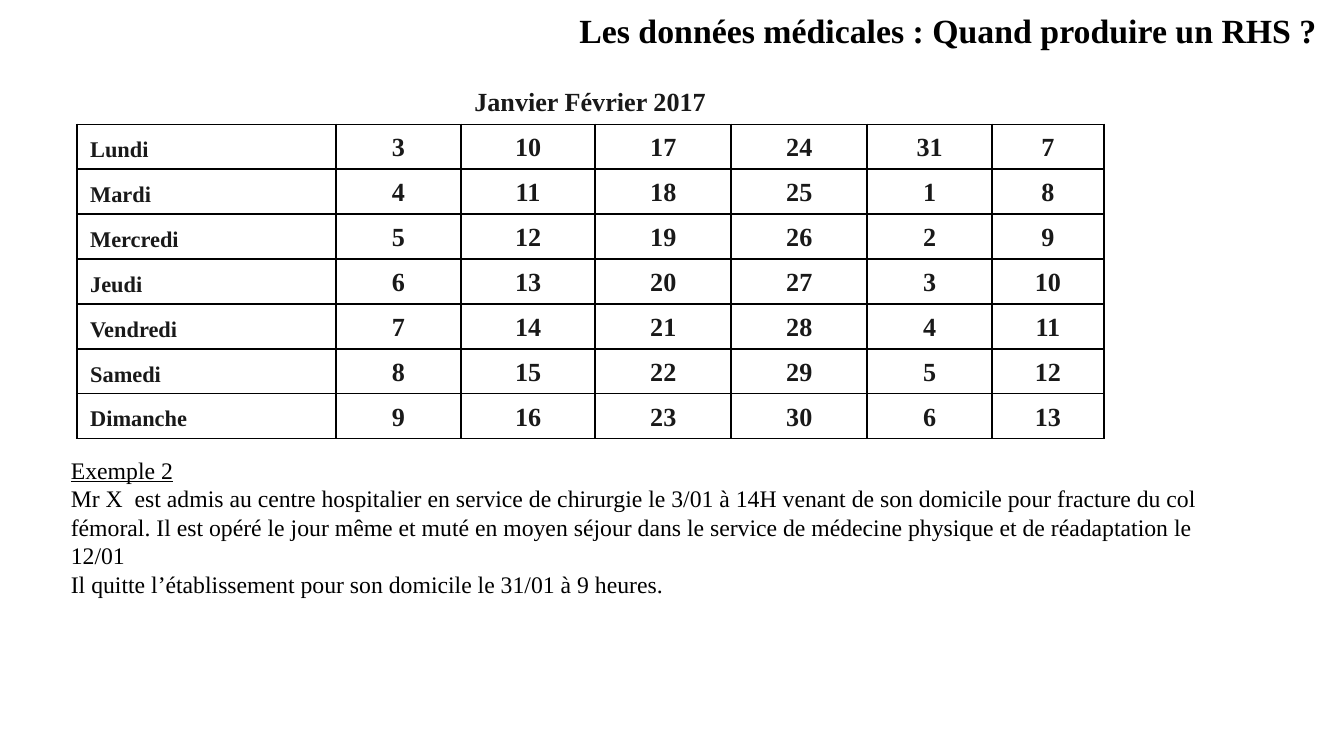
import pptx
import pptx.dml.color
import pptx.enum.text
import pptx.oxml
import pptx.oxml.ns
import pptx.util
from pptx.util import Cm

COLORS = {"text": "000000", "table_text": "191919", "border": "000000"}
FONT = "Times New Roman"
DAYS = ["Lundi", "Mardi", "Mercredi", "Jeudi", "Vendredi", "Samedi", "Dimanche"]
COLUMN_WIDTHS = [4.9, 2.36, 2.54, 2.57, 2.57, 2.36, 2.11]
ROW_HEIGHT = 0.82
FIRST_DATE = 3
DAYS_IN_JANUARY = 31
CASE_TEXT = [
    "Exemple 2",
    "Mr X  est admis au centre hospitalier en service de chirurgie le 3/01 à 14H "
    "venant de son domicile pour fracture du col fémoral. Il est opéré le jour même "
    "et muté en moyen séjour dans le service de médecine physique et de réadaptation "
    "le 12/01",
    "Il quitte l’établissement pour son domicile le 31/01 à 9 heures.",
]


def format_runs(paragraph, size, color, bold=False, underline=False):
    for run in paragraph.runs:
        run.font.name = FONT
        run.font.size = pptx.util.Pt(size)
        run.font.bold = bold
        run.font.underline = underline
        run.font.color.rgb = pptx.dml.color.RGBColor.from_string(COLORS[color])


def add_text(slide, left, top, width, height, lines, size, bold=False, wrap=True):
    shape = slide.shapes.add_textbox(Cm(left), Cm(top), Cm(width), Cm(height))
    text_frame = shape.text_frame
    text_frame.word_wrap = wrap
    text_frame.auto_size = pptx.enum.text.MSO_AUTO_SIZE.SHAPE_TO_FIT_TEXT
    text_frame.text = "\n".join(lines)
    for paragraph in text_frame.paragraphs:
        format_runs(paragraph, size, "text", bold)
    return text_frame


def set_borders(cell, visible_sides):
    properties = cell._tc.get_or_add_tcPr()
    for side in "LRTB":
        line = pptx.oxml.parse_xml(
            f'<a:ln{side} {pptx.oxml.ns.nsdecls("a")} w="12700"><a:noFill/></a:ln{side}>'
        )
        if side in visible_sides:
            line.remove(line[0])
            line.append(pptx.oxml.parse_xml(
                f'<a:solidFill {pptx.oxml.ns.nsdecls("a")}>'
                f'<a:srgbClr val="{COLORS["border"]}"/></a:solidFill>'
            ))
        properties.append(line)


def fill_cell(cell, text, size, centered=True, borders="LRTB"):
    set_borders(cell, borders)
    cell.fill.background()
    cell.vertical_anchor = pptx.enum.text.MSO_ANCHOR.BOTTOM
    cell.text_frame.text = text
    paragraph = cell.text_frame.paragraphs[0]
    alignment = pptx.enum.text.PP_ALIGN
    paragraph.alignment = alignment.CENTER if centered else alignment.LEFT
    paragraph_properties = paragraph._p.get_or_add_pPr()
    indent = Cm(0.97)
    paragraph_properties.set("marL", str(indent))
    paragraph_properties.set("indent", str(-indent))
    format_runs(paragraph, size, "table_text", bold=True)


def add_calendar(slide, left, top):
    row_count = len(DAYS) + 1
    column_count = len(COLUMN_WIDTHS)
    table = slide.shapes.add_table(
        row_count, column_count, Cm(left), Cm(top),
        Cm(sum(COLUMN_WIDTHS)), Cm(ROW_HEIGHT * row_count),
    ).table
    table.first_row = False
    table.horz_banding = False
    for column, width in zip(table.columns, COLUMN_WIDTHS):
        column.width = Cm(width)
    for row in table.rows:
        row.height = Cm(ROW_HEIGHT)

    for column in range(column_count):
        title = "Janvier Février 2017" if column == 0 else ""
        fill_cell(table.cell(0, column), title, 14, borders="B")
    table.cell(0, 0).merge(table.cell(0, column_count - 1))

    for weekday, name in enumerate(DAYS):
        fill_cell(table.cell(weekday + 1, 0), name, 12, centered=False)
        for week in range(column_count - 1):
            day = FIRST_DATE + weekday + 7 * week
            date = (day - 1) % DAYS_IN_JANUARY + 1
            fill_cell(table.cell(weekday + 1, week + 1), str(date), 14)


def main():
    presentation = pptx.Presentation()
    presentation.slide_width = Cm(25.4)
    presentation.slide_height = Cm(14.28)
    slide = presentation.slides.add_slide(presentation.slide_layouts[6])

    add_text(slide, 10.7, 0.05, 14.6, 1.04,
             ["Les données médicales : Quand produire un RHS ?"],
             18.1, bold=True, wrap=False)
    add_calendar(slide, 1.45, 1.5)
    case = add_text(slide, 1.09, 8.48, 22.5, 2.97, CASE_TEXT, 12.7)
    format_runs(case.paragraphs[0], 12.7, "text", underline=True)

    presentation.save("out.pptx")


if __name__ == "__main__":
    main()
